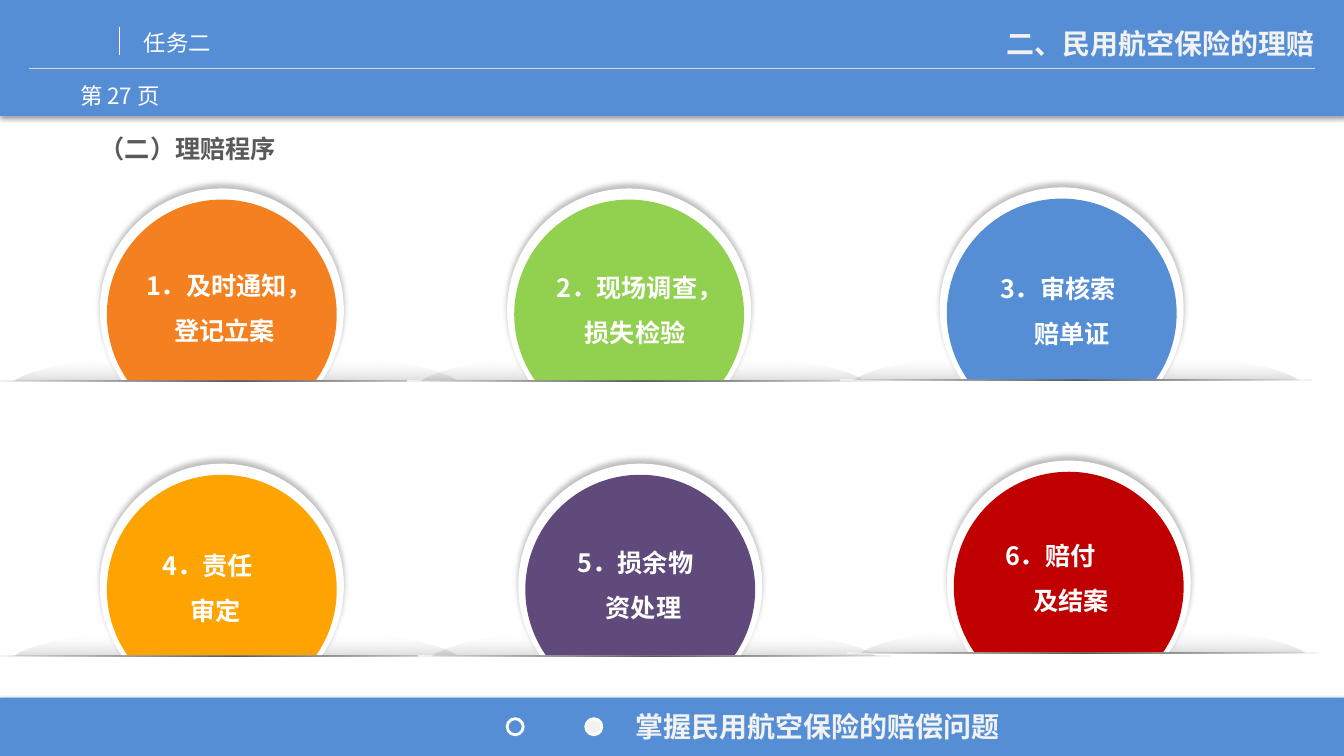
from math import acos, cos, pi, sin, tan

from lxml.etree import SubElement
from pptx import Presentation
from pptx.dml.color import RGBColor
from pptx.enum.shapes import MSO_CONNECTOR, MSO_SHAPE
from pptx.enum.text import MSO_ANCHOR, PP_ALIGN
from pptx.oxml.ns import qn
from pptx.util import Inches, Pt

COLORS = {
    "blue": "558ED5", "white": "FFFFFF", "pale": "F2F2F2", "rule": "D9D9D9",
    "dark": "595959", "gray": "808080", "black": "000000", "orange": "F5801F",
    "green": "92D050", "amber": "FDA403", "purple": "604A7B", "red": "C00000",
}
BAR_SHADOW = (35, 3.1, 1.8, 90)
RING_SHADOW = (25, 4, 3, 270)
FLOOR_STOPS = [(2, "pale", 100), (50, "dark", 100), (100, "pale", 100)]
SHADE_STOPS = [(26, "pale", 0), (100, "gray", 27)]


class SlideBuilder:
    font = "Noto Sans CJK SC"

    def __init__(self, slide):
        self.slide = slide

    def color(self, name):
        return RGBColor.from_string(COLORS[name])

    def add_xml_color(self, parent, name, alpha):
        element = SubElement(parent, qn("a:srgbClr"), val=COLORS[name])
        SubElement(element, qn("a:alpha"), val=str(alpha * 1000))

    def style(self, shape, fill=None, line=None, shadow=None):
        shape.shadow.inherit = False
        if fill:
            shape.fill.solid()
            shape.fill.fore_color.rgb = self.color(fill)
        else:
            shape.fill.background()
        if line:
            shape.line.color.rgb = self.color(line)
            shape.line.width = Pt(2)
        else:
            shape.line.fill.background()
        if shadow:
            alpha, blur, distance, angle = shadow
            effects = shape._element.spPr.find(qn("a:effectLst"))
            outer = SubElement(
                effects, qn("a:outerShdw"), blurRad=str(Pt(blur)),
                dist=str(Pt(distance)), dir=str(angle * 60000),
                algn="ctr", rotWithShape="0")
            self.add_xml_color(outer, "black", alpha)

    def gradient(self, shape, stops, angle):
        properties = shape._element.spPr
        empty_fill = properties.find(qn("a:noFill"))
        gradient = SubElement(properties, qn("a:gradFill"), rotWithShape="1")
        stop_list = SubElement(gradient, qn("a:gsLst"))
        for position, name, alpha in stops:
            stop = SubElement(stop_list, qn("a:gs"), pos=str(position * 1000))
            self.add_xml_color(stop, name, alpha)
        SubElement(gradient, qn("a:lin"), ang=str(angle * 60000), scaled="0")
        properties.replace(empty_fill, gradient)

    def preset(self, kind, left, top, width, height, **style):
        shape = self.slide.shapes.add_shape(
            kind, Inches(left), Inches(top), Inches(width), Inches(height))
        self.style(shape, **style)
        return shape

    def cap(self, center, base, radius_x, radius_y, height, **style):
        end = acos(1 - height / radius_y)
        quarters = [-pi / 2, 0, pi / 2] if end > pi / 2 else [0]
        angles = [-end, *quarters, end]
        points = [(Inches(center + radius_x * sin(angle)),
                   Inches(base - height + radius_y * (1 - cos(angle))))
                  for angle in angles]
        builder = self.slide.shapes.build_freeform(*points[0], scale=1.0)
        builder.add_line_segments(points[1:], close=True)
        shape = builder.convert_to_shape()
        self.round_segments(shape, angles, points, radius_x, radius_y)
        self.style(shape, **style)
        return shape

    def round_segments(self, shape, angles, points, radius_x, radius_y):
        segments = list(shape._element.spPr.iter(qn("a:lnTo")))
        for index, segment in enumerate(segments[:len(angles) - 1]):
            reach = 4 / 3 * tan((angles[index + 1] - angles[index]) / 4)
            segment.tag = qn("a:cubicBezTo")
            for position, sign in enumerate((1, -1)):
                angle = angles[index + position]
                x, y = points[index + position]
                control = SubElement(
                    segment, qn("a:pt"),
                    x=str(x - shape.left + Inches(sign * reach * radius_x * cos(angle))),
                    y=str(y - shape.top + Inches(sign * reach * radius_y * sin(angle))))
                segment.insert(position, control)

    def line(self, x1, y1, x2, y2, color):
        connector = self.slide.shapes.add_connector(
            MSO_CONNECTOR.STRAIGHT, Inches(x1), Inches(y1), Inches(x2), Inches(y2))
        connector.line.color.rgb = self.color(color)
        connector.line.width = Pt(0.75)
        SubElement(connector._element.spPr, qn("a:effectLst"))

    def text(self, lines, left, top, width, height, size, color, bold=False,
             align=PP_ALIGN.LEFT, anchor=MSO_ANCHOR.TOP, spacing=None, indent=0):
        box = self.slide.shapes.add_textbox(
            Inches(left), Inches(top), Inches(width), Inches(height))
        frame = box.text_frame
        frame.word_wrap = True
        frame.vertical_anchor = anchor
        frame.text = "\n".join(lines)
        for number, paragraph in enumerate(frame.paragraphs):
            paragraph.alignment = align
            paragraph.line_spacing = spacing
            paragraph.font.size = Pt(size)
            paragraph.font.bold = bold
            paragraph.font.color.rgb = self.color(color)
            paragraph.font.name = self.font
            SubElement(paragraph.font._rPr, qn("a:ea"), typeface=self.font)
            if number and indent:
                paragraph._p.pPr.set("marL", str(Inches(indent)))
                paragraph._p.pPr.set("indent", "0")

    def rising_disc(self, left, base, color):
        floor = self.preset(MSO_SHAPE.RECTANGLE, left, base, 4.68, 0.02)
        self.gradient(floor, FLOOR_STOPS, 180)
        shade = self.cap(left + 2.34, base, 2.25, 0.36, 0.28)
        self.gradient(shade, SHADE_STOPS, 90)
        center = left + 2.2
        self.cap(center, base, 1.21, 1.21, 1.9, fill="white", shadow=RING_SHADOW)
        self.cap(center, base, 1.14, 1.14, 1.79, fill=color)


def main():
    presentation = Presentation()
    presentation.slide_width = Inches(13.33)
    presentation.slide_height = Inches(7.5)
    slide = presentation.slides.add_slide(presentation.slide_layouts[6])
    builder = SlideBuilder(slide)

    for top, height in [(0, 1.15), (6.92, 0.58)]:
        builder.preset(MSO_SHAPE.RECTANGLE, 0, top, 13.33, height,
                       fill="blue", shadow=BAR_SHADOW)
    builder.line(0.29, 0.68, 13.04, 0.68, "rule")
    builder.line(1.19, 0.27, 1.19, 0.55, "white")
    builder.text(["第 27 页"], 0.59, 0.75, 1.2, 0.4, 16, "white",
                 align=PP_ALIGN.CENTER, anchor=MSO_ANCHOR.MIDDLE)
    builder.text(["任务二"], 1.33, 0.24, 3.26, 0.37, 16, "white")
    for left, fill in [(5.81, "pale"), (5.03, None)]:
        builder.preset(MSO_SHAPE.OVAL, left, 7.13, 0.16, 0.16,
                       fill=fill, line="white")
    builder.text(["掌握民用航空保险的赔偿问题"], 6.2, 6.99, 3.94, 0.44,
                 20, "pale", bold=True)
    builder.text(["二、民用航空保险的理赔"], 8.09, 0.21, 5.05, 0.44,
                 20, "pale", bold=True, align=PP_ALIGN.RIGHT)
    builder.text(["（二）理赔程序"], 0.89, 1.17, 4.06, 0.47,
                 18, "dark", bold=True, spacing=1.35)

    steps = [
        (0, 3.77, "orange", ["1．及时通知，", "登记立案"], (1.35, 2.48, 1.72, 0.96), 0.28),
        (0, 6.5, "amber", ["4．责任", "审定"], (1.51, 5.26, 1.43, 1.01), 0.28),
        (4.04, 3.77, "green", ["2．现场调查，", "损失检验"], (5.42, 2.5, 1.8, 0.96), 0.28),
        (4.15, 6.5, "purple", ["5．损余物", "资处理"], (5.63, 5.23, 1.43, 0.96), 0.28),
        (8.33, 3.76, "blue", ["3．审核索", "赔单证"], (9.82, 2.51, 1.43, 0.96), 0.34),
        (8.4, 6.47, "red", ["6．赔付", "及结案"], (9.87, 5.16, 1.56, 1.01), 0.28),
    ]
    for left, base, color, lines, box, indent in steps:
        builder.rising_disc(left, base, color)
        builder.text(lines, *box, 18, "white", bold=True, spacing=1.5, indent=indent)

    presentation.save("out.pptx")


if __name__ == "__main__":
    main()
